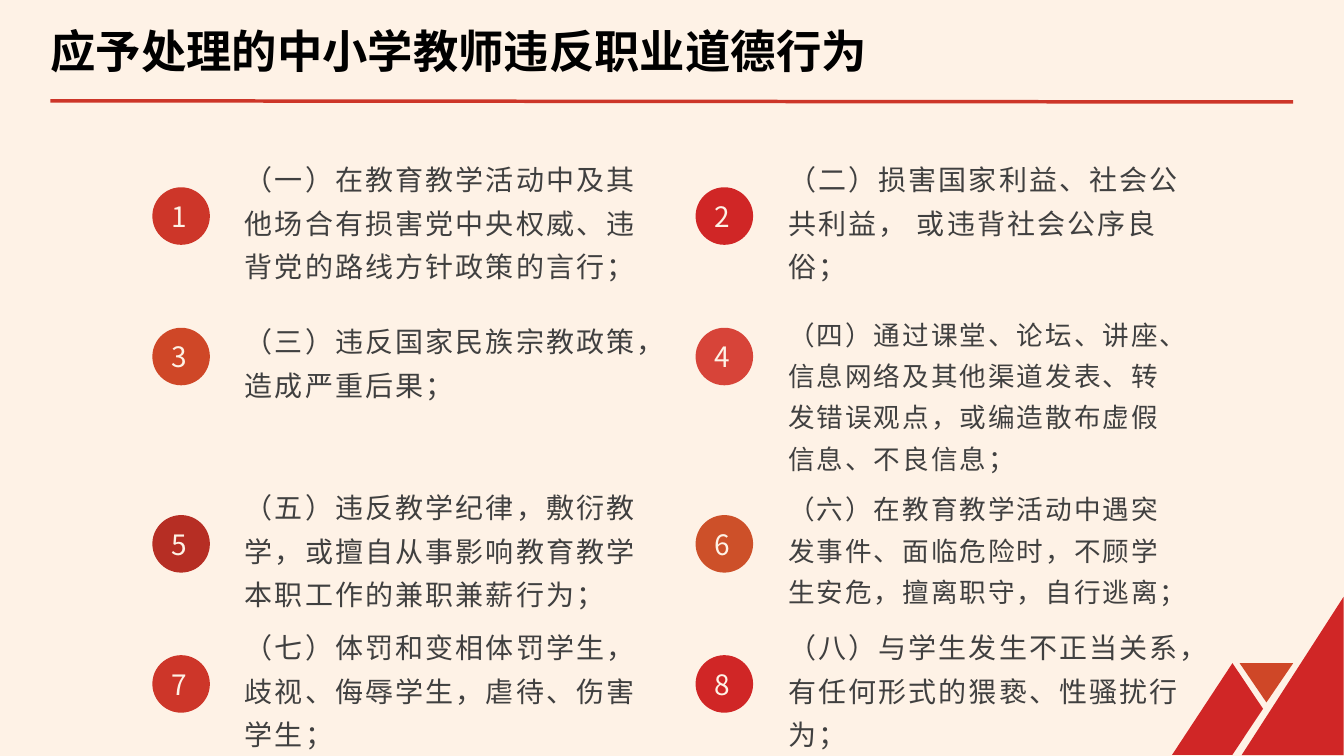
from dataclasses import dataclass

from lxml import etree
from pptx import Presentation
from pptx import util as u
from pptx.dml.color import RGBColor
from pptx.enum import shapes, text
from pptx.oxml.ns import qn


@dataclass(frozen=True)
class Theme:
    font: str = "Noto Sans CJK SC"
    background: str = "FEF2E6"
    title: str = "000000"
    body: str = "404040"
    red: str = "D02626"
    brick: str = "CD3629"
    orange: str = "CF4727"
    coral: str = "D74439"
    maroon: str = "B62E24"
    amber: str = "CD5029"
    title_size: float = 32.4
    body_size: float = 20
    small_size: float = 19
    line_ratio: float = 1.56


@dataclass(frozen=True)
class Rule:
    wording: str
    color: str
    size: float
    drop: float = 0


THEME = Theme()

RULES = [
    Rule("（一）在教育教学活动中及其他场合有损害党中央权威、违背党的路线方针政策的言行；", THEME.brick, THEME.body_size),
    Rule("（二）损害国家利益、社会公共利益， 或违背社会公序良俗；", THEME.red, THEME.body_size),
    Rule("（三）违反国家民族宗教政策，造成严重后果；", THEME.orange, THEME.body_size),
    Rule("（四）通过课堂、论坛、讲座、信息网络及其他渠道发表、转发错误观点，或编造散布虚假信息、不良信息；",
         THEME.coral, THEME.small_size, drop=0.84),
    Rule("（五）违反教学纪律，敷衍教学，或擅自从事影响教育教学本职工作的兼职兼薪行为；", THEME.maroon, THEME.body_size),
    Rule("（六）在教育教学活动中遇突发事件、面临危险时，不顾学生安危，擅离职守，自行逃离；", THEME.amber, THEME.small_size),
    Rule("（七）体罚和变相体罚学生，歧视、侮辱学生，虐待、伤害学生；", THEME.brick, THEME.body_size),
    Rule("（八）与学生发生不正当关系，有任何形式的猥亵、性骚扰行为；", THEME.red, THEME.body_size),
]
COLUMN_LEFTS = (3.84, 17.53)
ROW_TOPS = (4.72, 8.26, 12.98, 16.51)
BADGE_SIZE = 1.45


def paint(shape, color: str) -> None:
    shape.shadow.inherit = False
    shape.fill.solid()
    shape.fill.fore_color.rgb = RGBColor.from_string(color)
    shape.line.fill.background()


def add_block(slide, kind, left: float, top: float, width: float, height: float,
              color: str, adjustment: float):
    shape = slide.shapes.add_shape(kind, u.Cm(left), u.Cm(top), u.Cm(width), u.Cm(height))
    shape.adjustments[0] = adjustment
    paint(shape, color)
    return shape


def add_text(slide, wording: str, left: float, top: float, width: float, height: float, *,
             size: float, color: str, bold: bool = False, tracking: float = 0,
             centered: bool = False, pitch: float = 0, inset: bool = True) -> None:
    frame = slide.shapes.add_textbox(u.Cm(left), u.Cm(top), u.Cm(width), u.Cm(height)).text_frame
    frame.word_wrap = True
    frame.vertical_anchor = text.MSO_ANCHOR.MIDDLE
    if not inset:
        frame.margin_left = frame.margin_right = frame.margin_top = frame.margin_bottom = 0
    paragraph = frame.paragraphs[0]
    paragraph.alignment = text.PP_ALIGN.CENTER if centered else text.PP_ALIGN.LEFT
    if pitch:
        paragraph.line_spacing = u.Pt(pitch)
    run = paragraph.add_run()
    run.text = wording
    run.font.size = u.Pt(size)
    run.font.bold = bold
    run.font.name = THEME.font
    run.font.color.rgb = RGBColor.from_string(color)
    # East Asian font and letter spacing
    properties = run._r.get_or_add_rPr()
    properties.find(qn("a:latin")).addnext(
        etree.Element(qn("a:ea"), {"typeface": THEME.font}))
    if tracking:
        properties.set("spc", str(round(tracking * 100)))


def draw_corner(slide) -> None:
    builder = slide.shapes.build_freeform(u.Cm(31.06), u.Cm(16.71), scale=1.0)
    corners = ((31.83, 17.86), (31.06, 19.02), (29.54, 19.02))
    builder.add_line_segments([(u.Cm(x), u.Cm(y)) for x, y in corners], close=True)
    paint(builder.convert_to_shape(), THEME.red)
    triangle = shapes.MSO_SHAPE.ISOSCELES_TRIANGLE
    add_block(slide, triangle, 31.29, 15.04, 2.57, 3.99, THEME.red, 1)
    add_block(slide, triangle, 31.24, 16.71, 1.35, 0.99, THEME.orange, 0.5).rotation = 180


def draw_heading(slide) -> None:
    line = slide.shapes.add_connector(shapes.MSO_CONNECTOR.STRAIGHT,
                                      u.Cm(1.27), u.Cm(2.54), u.Cm(32.59), u.Cm(2.57))
    line.line.color.rgb = RGBColor.from_string(THEME.brick)
    line.line.width = u.Pt(2.5)
    etree.SubElement(line._element.spPr, qn("a:effectLst"))
    add_text(slide, "应予处理的中小学教师违反职业道德行为", 1.27, 0.43, 31.32, 1.7,
             size=THEME.title_size, color=THEME.title, bold=True, inset=False)


def draw_rule(slide, index: int, rule: Rule) -> None:
    row, column = divmod(index, len(COLUMN_LEFTS))
    left, top = COLUMN_LEFTS[column], ROW_TOPS[row]
    add_block(slide, shapes.MSO_SHAPE.ROUNDED_RECTANGLE, left, top,
              BADGE_SIZE, BADGE_SIZE, rule.color, 0.5)
    add_text(slide, rule.wording, left + 2.08, top - 0.23 + rule.drop, 10.41, 2.01,
             size=rule.size, color=THEME.body, tracking=1.5,
             pitch=round(rule.size * THEME.line_ratio, 1))
    add_text(slide, str(index + 1), left, top + 0.13, 1.37, 1.19,
             size=THEME.body_size, color=THEME.background, tracking=3, centered=True)


def main() -> None:
    presentation = Presentation()
    presentation.slide_width, presentation.slide_height = u.Cm(33.87), u.Cm(19.05)
    slide = presentation.slides.add_slide(presentation.slide_layouts[6])
    slide.background.fill.solid()
    slide.background.fill.fore_color.rgb = RGBColor.from_string(THEME.background)
    draw_corner(slide)
    draw_heading(slide)
    for index, rule in enumerate(RULES):
        draw_rule(slide, index, rule)
    presentation.save("out.pptx")


if __name__ == "__main__":
    main()
